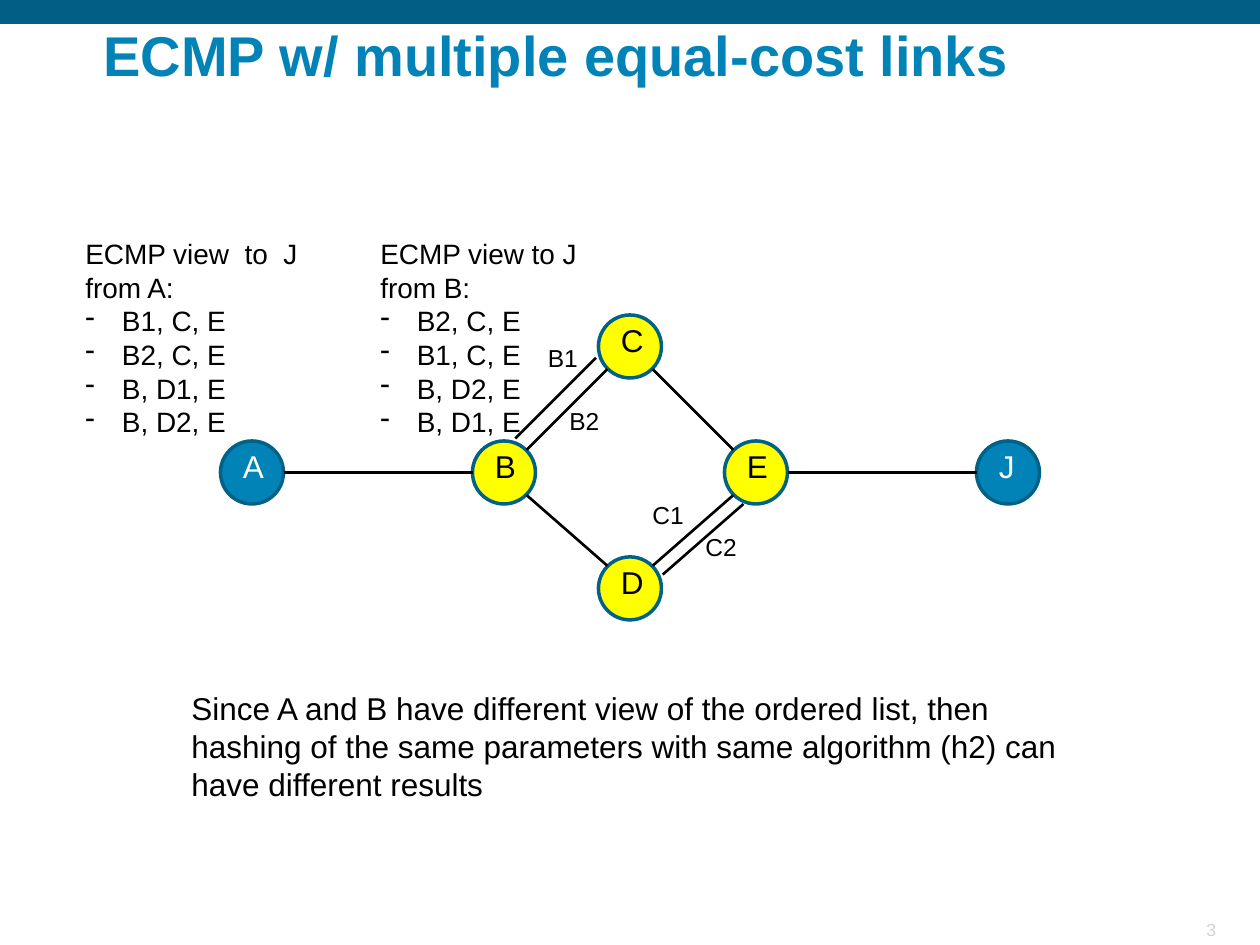
import pptx
import pptx.dml.color
import pptx.enum.shapes
import pptx.enum.text
import pptx.oxml.xmlchemy
import pptx.util
from pptx.util import Inches

BLUE = pptx.dml.color.RGBColor(0x01, 0x83, 0xB7)
BAND_BLUE = pptx.dml.color.RGBColor(0x01, 0x5F, 0x85)
OUTLINE_BLUE = pptx.dml.color.RGBColor(0x01, 0x61, 0x87)
YELLOW = pptx.dml.color.RGBColor(0xFF, 0xFF, 0x00)
WHITE = pptx.dml.color.RGBColor(0xFF, 0xFF, 0xFF)
BLACK = pptx.dml.color.RGBColor(0x00, 0x00, 0x00)
GRAY = pptx.dml.color.RGBColor(0xD3, 0xD3, 0xD3)

SHAPE_TYPE = pptx.enum.shapes.MSO_SHAPE
NODE_SIZE = 0.5
RADIUS = NODE_SIZE / 2
DIAGONAL = 0.18

presentation = pptx.Presentation()
presentation.slide_width = Inches(10)
presentation.slide_height = Inches(7.5)
slide = presentation.slides.add_slide(presentation.slide_layouts[5])


def format_text(text_frame, size, color, bold=False):
    for paragraph in text_frame.paragraphs:
        for run in paragraph.runs:
            run.font.name = "Arial"
            run.font.size = pptx.util.Pt(size)
            run.font.bold = bold
            run.font.color.rgb = color


def add_text(text, left, top, width, height, size, color=BLACK):
    shape = slide.shapes.add_textbox(Inches(left), Inches(top), Inches(width), Inches(height))
    shape.text_frame.word_wrap = True
    shape.text_frame.auto_size = pptx.enum.text.MSO_AUTO_SIZE.SHAPE_TO_FIT_TEXT
    shape.text_frame.text = text
    format_text(shape.text_frame, size, color)
    return shape.text_frame


band = slide.shapes.add_shape(SHAPE_TYPE.RECTANGLE, 0, 0, Inches(10), Inches(0.19))
band.shadow.inherit = False
band.fill.solid()
band.fill.fore_color.rgb = BAND_BLUE
band.line.fill.background()

page_number = add_text("3", 9.4, 7.25, 0.35, 0.26, 10, GRAY)
page_number.word_wrap = False
page_number.vertical_anchor = pptx.enum.text.MSO_ANCHOR.BOTTOM
page_number.paragraphs[0].alignment = pptx.enum.text.PP_ALIGN.RIGHT

title = slide.shapes.title
title.left, title.top = Inches(0.72), Inches(0.17)
title.width, title.height = Inches(8.91), Inches(0.58)
title.text_frame.text = "ECMP w/ multiple equal-cost links"
title.text_frame.auto_size = pptx.enum.text.MSO_AUTO_SIZE.NONE
title.text_frame.vertical_anchor = pptx.enum.text.MSO_ANCHOR.BOTTOM
title.text_frame.paragraphs[0].alignment = pptx.enum.text.PP_ALIGN.LEFT
title.text_frame.paragraphs[0].line_spacing = 0.9
format_text(title.text_frame, 32, BLUE, True)

nodes = {
    "A": (2, 3.75, BLUE, WHITE),
    "B": (4, 3.75, YELLOW, BLACK),
    "C": (5, 2.75, YELLOW, BLACK),
    "D": (5, 4.67, YELLOW, BLACK),
    "E": (6, 3.75, YELLOW, BLACK),
    "J": (8, 3.75, BLUE, WHITE),
}
for name, (x, y, fill_color, text_color) in nodes.items():
    node = slide.shapes.add_shape(
        SHAPE_TYPE.OVAL, Inches(x - RADIUS), Inches(y - RADIUS), Inches(NODE_SIZE), Inches(NODE_SIZE)
    )
    node.shadow.inherit = False
    node.fill.solid()
    node.fill.fore_color.rgb = fill_color
    node.line.color.rgb = OUTLINE_BLUE
    node.line.width = pptx.util.Pt(2)

links = [
    ("A", "B", 0, 0),
    ("B", "C", 0, 0),
    ("B", "C", -0.09, -0.09),
    ("C", "E", 0, 0),
    ("E", "D", 0, 0),
    ("E", "D", 0.08, 0.07),
    ("B", "D", 0, 0),
    ("E", "J", 0, 0),
]
for start, end, shift_x, shift_y in links:
    start_x, start_y = nodes[start][:2]
    end_x, end_y = nodes[end][:2]
    if start_y == end_y:
        inset_x, inset_y = RADIUS, 0
    else:
        inset_x = DIAGONAL if end_x > start_x else -DIAGONAL
        inset_y = DIAGONAL if end_y > start_y else -DIAGONAL
    link = slide.shapes.add_connector(
        pptx.enum.shapes.MSO_CONNECTOR.STRAIGHT,
        Inches(start_x + inset_x + shift_x),
        Inches(start_y + inset_y + shift_y),
        Inches(end_x - inset_x + shift_x),
        Inches(end_y - inset_y + shift_y),
    )
    link.line.color.rgb = BLACK
    link.line.width = pptx.util.Pt(1.5)
    link._element.spPr.append(pptx.oxml.xmlchemy.OxmlElement("a:effectLst"))

for name, (x, y, fill_color, text_color) in nodes.items():
    add_text(name, x - 0.17, y - RADIUS, 0.42, 0.42, 18, text_color)

views = [
    (0.58, "ECMP view  to  J from A:", ["B1, C, E", "B2, C, E", "B, D1, E", "B, D2, E"]),
    (2.92, "ECMP view to J from B:", ["B2, C, E", "B1, C, E", "B, D2, E", "B, D1, E"]),
]
for left, heading, routes in views:
    text_frame = add_text("\n".join([heading] + routes), left, 1.83, 2.17, 1.72, 16)
    for paragraph in text_frame.paragraphs[1:]:
        properties = paragraph._p.get_or_add_pPr()
        properties.set("marL", str(Inches(0.29)))
        properties.set("indent", str(-Inches(0.29)))
        bullet = pptx.oxml.xmlchemy.OxmlElement("a:buChar")
        bullet.set("char", "-")
        properties.append(bullet)

add_text(
    "Since A and B have different view of the ordered list, then hashing of the same "
    "parameters with same algorithm (h2) can have different results",
    1.42, 5.42, 7.25, 1.01, 18,
)

link_labels = [("B1", 4.25, 2.67), ("B2", 4.42, 3.17), ("C1", 5.08, 3.92), ("C2", 5.5, 4.17)]
for label, left, top in link_labels:
    add_text(label, left, top, 0.5, 0.34, 14)

presentation.save("out.pptx")
